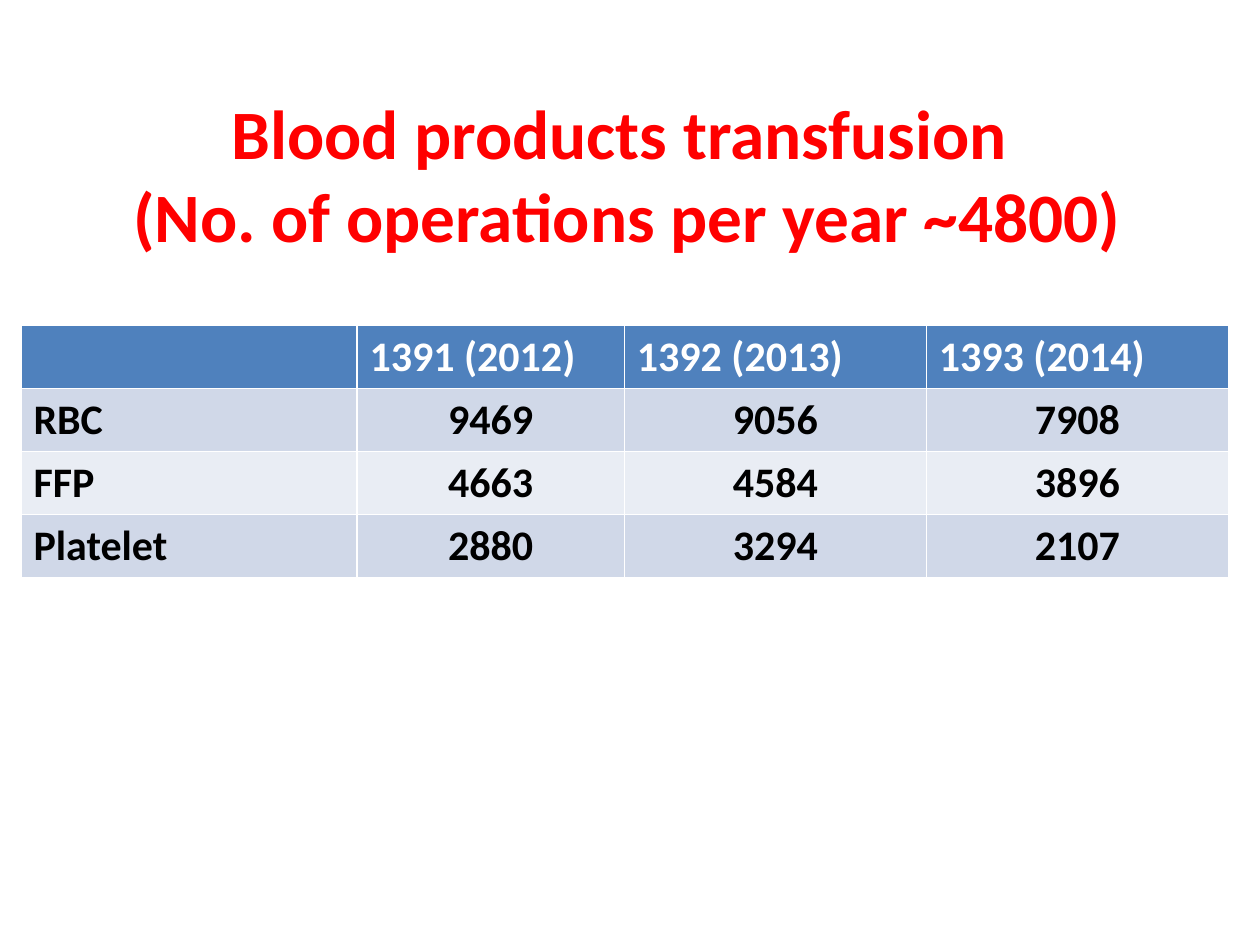
"""Build a slide with a table of blood products transfused per year."""
import pptx
import pptx.dml.color
import pptx.enum.text
import pptx.util

Pt = pptx.util.Pt
ALIGN = pptx.enum.text.PP_ALIGN
ANCHOR = pptx.enum.text.MSO_ANCHOR
COLORS = {
    "title": "FF0000",
    "header": "4F81BD",
    "header_text": "FFFFFF",
    "odd_row": "D0D8E8",
    "even_row": "E9EDF4",
    "body_text": "000000",
}


def write_text(text_frame, text, size=24, color="body_text", align=ALIGN.LEFT):
    paragraph = text_frame.paragraphs[0]
    paragraph.text = text
    paragraph.alignment = align
    for run in paragraph.runs:
        run.font.name = "Calibri"
        run.font.size = Pt(size)
        run.font.bold = True
        run.font.color.rgb = pptx.dml.color.RGBColor.from_string(COLORS[color])


presentation = pptx.Presentation()
presentation.slide_width = Pt(720)
presentation.slide_height = Pt(540)
slide = presentation.slides.add_slide(presentation.slide_layouts[6])

title = slide.shapes.add_textbox(Pt(30), Pt(54), Pt(648), Pt(90))
title.text_frame.word_wrap = True
title.text_frame.vertical_anchor = ANCHOR.MIDDLE
write_text(
    title.text_frame,
    "Blood products transfusion\v (No. of operations per year ~4800)",
    size=39.6,
    color="title",
    align=ALIGN.CENTER,
)

rows = [
    ["", "1391 (2012)", "1392 (2013)", "1393 (2014)"],
    ["RBC", "9469", "9056", "7908"],
    ["FFP", "4663", "4584", "3896"],
    ["Platelet", "2880", "3294", "2107"],
]
column_widths = [192, 152.8, 172.6, 172.6]
row_height = 36

table = slide.shapes.add_table(
    len(rows), len(column_widths), Pt(12), Pt(186),
    Pt(sum(column_widths)), Pt(row_height * len(rows)),
).table
for column, width in zip(table.columns, column_widths):
    column.width = Pt(width)

for row_index, values in enumerate(rows):
    is_header = row_index == 0
    fill = "header" if is_header else "odd_row" if row_index % 2 else "even_row"
    for column_index, value in enumerate(values):
        cell = table.cell(row_index, column_index)
        cell.fill.solid()
        cell.fill.fore_color.rgb = pptx.dml.color.RGBColor.from_string(COLORS[fill])
        is_number = not is_header and column_index > 0
        write_text(
            cell.text_frame,
            value,
            color="header_text" if is_header else "body_text",
            align=ALIGN.CENTER if is_number else ALIGN.LEFT,
        )

presentation.save("out.pptx")
